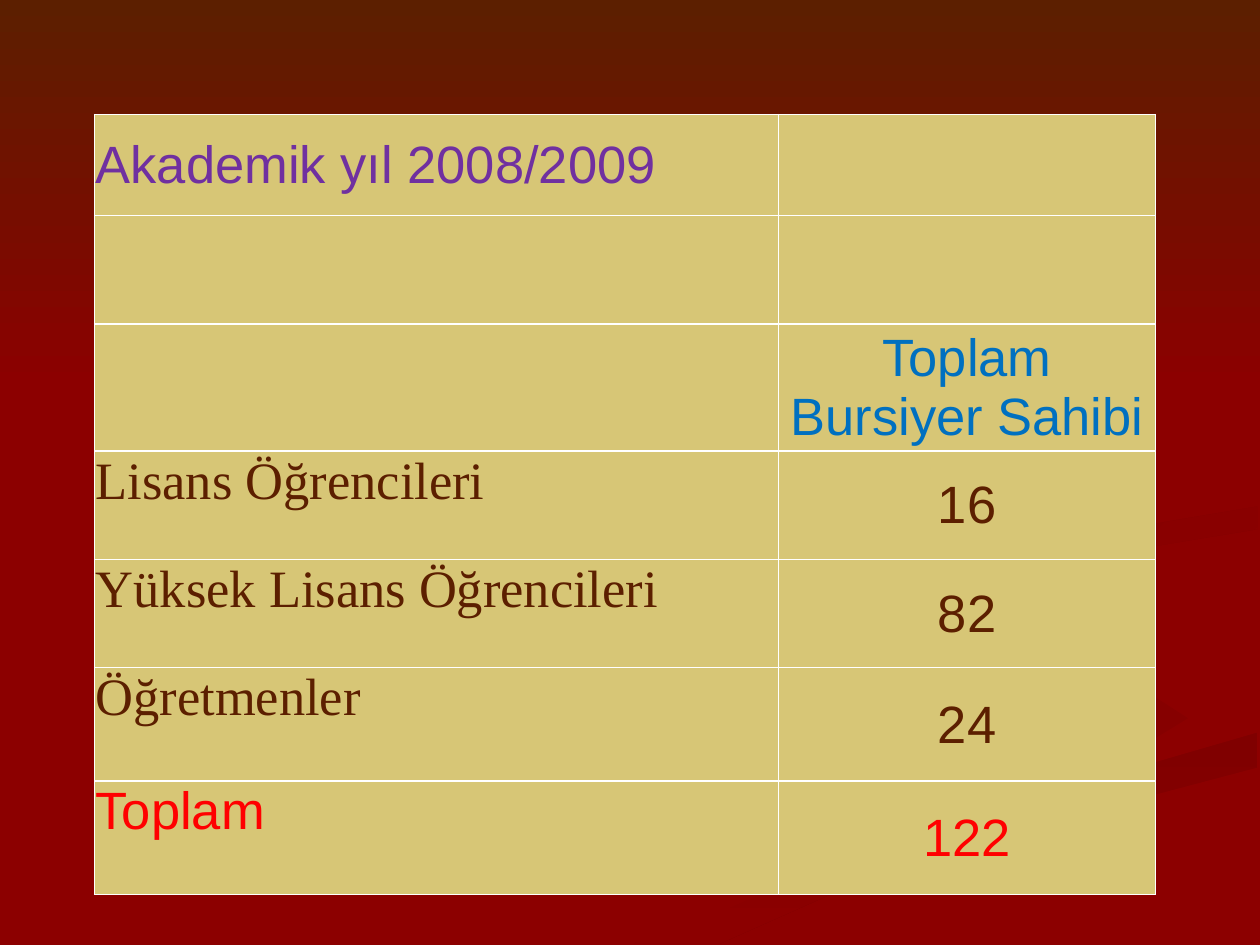
from lxml.etree import SubElement as Sub
from pptx import Presentation
from pptx.dml.color import RGBColor
from pptx.enum.text import MSO_ANCHOR as Anchor, PP_ALIGN as Align
from pptx.oxml.ns import qn
from pptx.util import Inches, Pt

COLS, ROWS = 1000, 750
UNIT = Inches(10) // COLS
RED, BROWN, SAND, WHITE = "8C0000", "5C1F00", "D7C676", "FFFFFF"

SWIRLS = [
    ((RED, "860000"), 0, [
        (575, 459), (602, 490), (781, 553), (800, 581), (564, 665),
        (361, 749), (300, 749), (499, 661), (785, 570), (570, 472)]),
    ((RED, "860000"), 45, [
        (724, 464), (758, 498), (888, 535), (943, 570), (894, 605),
        (918, 581), (854, 539), (739, 494)]),
    (("800000", RED), 90, [
        (503, 749), (571, 749), (722, 682), (998, 609), (998, 581),
        (696, 669)]),
    ((RED, RED), 0, [
        (725, 464), (758, 498), (889, 535), (943, 570), (881, 608),
        (663, 668), (477, 749), (519, 747), (696, 669), (999, 581),
        (999, 538), (832, 498), (781, 463), (865, 424), (999, 402),
        (999, 387), (788, 422)]),
    (("840000", RED), 45, [
        (781, 460), (826, 496), (805, 472), (859, 443), (998, 420),
        (998, 402), (849, 427)]),
    (("820000", RED), 45, [
        (762, 233), (864, 291), (894, 344), (825, 402), (624, 444),
        (593, 470), (622, 500), (577, 462), (649, 420), (861, 370),
        (876, 306)]),
]

LINES = [
    (80, "Akademik yıl 2008/2009", "", "7030A0", "Arial", Anchor.MIDDLE),
    (86, "", "", BROWN, "Arial", Anchor.TOP),
    (101, "", "Toplam Bursiyer Sahibi", "0070C0", "Arial", Anchor.TOP),
    (86, "Lisans Öğrencileri", "16", BROWN, "Times New Roman", Anchor.TOP),
    (86, "Yüksek Lisans Öğrencileri", "82", BROWN, "Times New Roman", Anchor.TOP),
    (90, "Öğretmenler", "24", BROWN, "Times New Roman", Anchor.TOP),
    (90, "Toplam", "122", "FF0000", "Arial", Anchor.TOP),
]


def paint(code):
    return RGBColor.from_string(code)


def blend(fill, tones, angle):
    fill.gradient()
    fill.gradient_angle = (360 - angle) % 360
    for stop, tone in zip(fill.gradient_stops, tones):
        stop.color.rgb = paint(tone)


def draw(slide, box, dots, tones, angle):
    left, top = box[:2]
    pen = slide.shapes.build_freeform(*dots[0], scale=UNIT)
    pen.add_line_segments(dots[1:], close=True)
    form = pen.convert_to_shape(left * UNIT, top * UNIT)
    form.shadow.inherit = False
    form.line.fill.background()
    if tones[0] == tones[1]:
        form.fill.solid()
        form.fill.fore_color.rgb = paint(tones[0])
    else:
        blend(form.fill, tones, angle)


def backdrop(slide, box):
    ground = slide.background.fill
    ground.solid()
    ground.fore_color.rgb = paint(RED)
    for tones, angle, dots in SWIRLS:
        draw(slide, box, dots, tones, angle)
    wide, low = box[2], 308
    band = [(0, 0), (0, low), (wide, low), (wide, 0)]
    draw(slide, box, band, (BROWN, RED), 90)


def edge(cell):
    props = cell._tc.get_or_add_tcPr()
    for spot, side in enumerate("LRTB"):
        line = Sub(props, qn(f"a:ln{side}"), w=str(Pt(1)))
        Sub(Sub(line, qn("a:solidFill")), qn("a:srgbClr"), val=WHITE)
        props.insert(spot, line)


def write(cell, text, tone, font, anchor, align):
    cell.fill.solid()
    cell.fill.fore_color.rgb = paint(SAND)
    edge(cell)
    if not text:
        return
    cell.margin_left = cell.margin_right = cell.margin_top = UNIT
    cell.margin_bottom = 0
    cell.vertical_anchor = anchor
    cell.text = text
    para = cell.text_frame.paragraphs[0]
    para.alignment = align
    para.font.size = Pt(30)
    para.font.name = font
    para.font.color.rgb = paint(tone)


def grants(slide, box):
    spot = [part * UNIT for part in box]
    table = slide.shapes.add_table(len(LINES), 2, *spot).table
    table.first_row = table.horz_banding = False
    first = 543
    for col, wide in zip(table.columns, (first, box[2] - first)):
        col.width = wide * UNIT
    for row, (high, label, count, tone, font, anchor) in zip(table.rows, LINES):
        row.height = high * UNIT
        name, total = row.cells
        write(name, label, tone, font, anchor, Align.LEFT)
        write(total, count, tone, "Arial", Anchor.MIDDLE, Align.CENTER)


def main():
    deck = Presentation()
    deck.slide_width, deck.slide_height = COLS * UNIT, ROWS * UNIT
    slide = deck.slides.add_slide(deck.slide_layouts[6])
    backdrop(slide, (0, 0, COLS, ROWS))
    grants(slide, (75, 91, 842, 619))
    deck.save("out.pptx")


if __name__ == "__main__":
    main()
